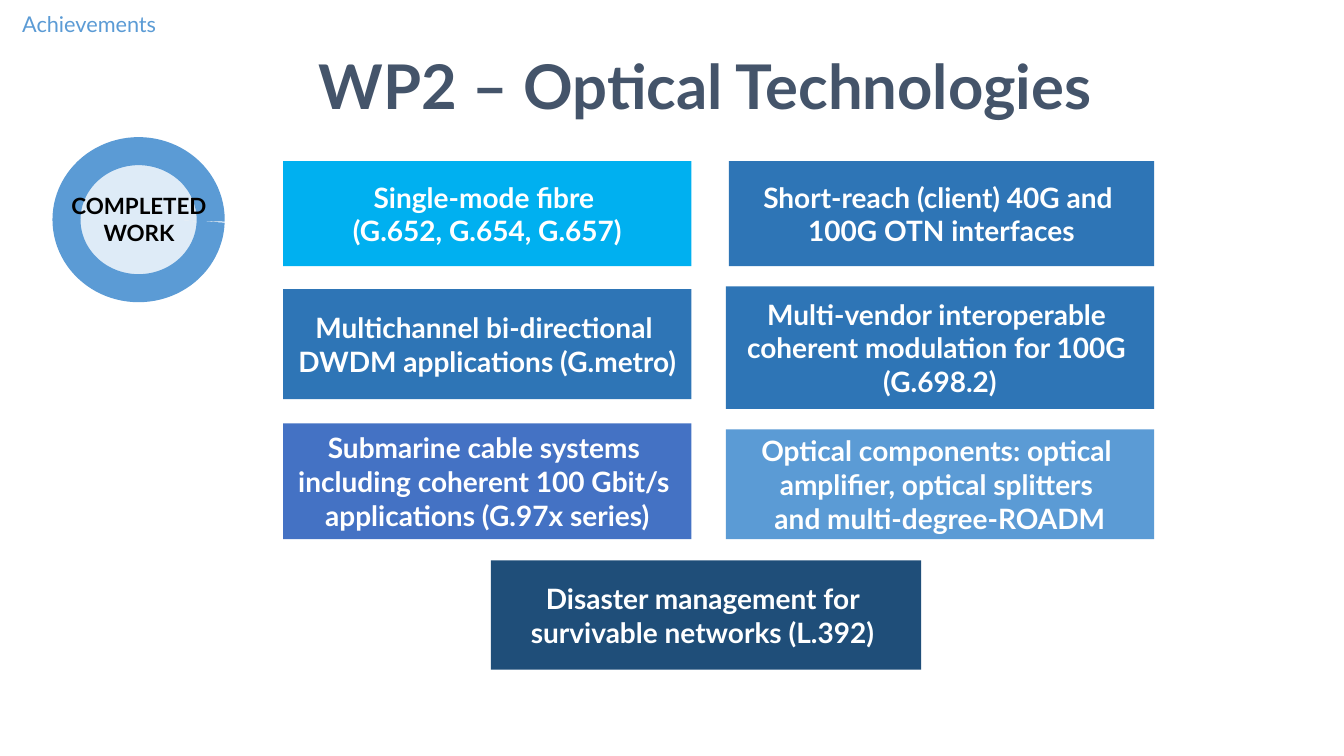
from pptx import Presentation
from pptx.dml.color import RGBColor
from pptx.enum.shapes import MSO_SHAPE
from pptx.enum.text import MSO_ANCHOR, PP_ALIGN
from pptx.util import Pt

NAVY, BLUE, SKY = "1F4E79", "2E75B6", "5B9BD5"
LEFT_COLUMN = (202.3, 291.6)
RIGHT_COLUMN = (518.4, 306)

# (left, width), top, height, fill, wording
TOPICS = [
    (LEFT_COLUMN, 302.4, 82.8, "4472C4",
     "Submarine cable systems \vincluding coherent 100 Gbit/s \vapplications (G.97x series)"),
    ((350.6, 307.4), 400.3, 78.1, NAVY,
     "Disaster management for \vsurvivable networks (L.392) "),
    (LEFT_COLUMN, 115.2, 74.9, "00B0F0",
     "Single-mode fibre \v(G.652, G.654, G.657)"),
    ((520.6, 303.8), 115.2, 74.9, BLUE,
     "Short-reach (client) 40G and \v100G OTN interfaces"),
    (LEFT_COLUMN, 206.6, 78.5, BLUE,
     "Multichannel bi-directional \vDWDM applications (G.metro)"),
    (RIGHT_COLUMN, 204.5, 87.5, BLUE,
     "Multi-vendor interoperable \vcoherent modulation for 100G \v(G.698.2)"),
    (RIGHT_COLUMN, 306.7, 78.5, SKY,
     "Optical components: optical \namplifier, optical splitters \vand multi-degree-ROADM"),
]


def color(hex_code):
    return RGBColor.from_string(hex_code)


def assign(target, values):
    """Set each named attribute on the target."""
    for name, value in values.items():
        setattr(target, name, value)


class SlideBuilder:
    font_name = "Lato"

    def __init__(self, slide):
        self.shapes = slide.shapes

    def fill_text(self, frame, wording, size, ink, inset, bold=True, wrap=True,
                  anchor=MSO_ANCHOR.TOP, paragraph_format=None):
        """Fill a text frame; inset is (horizontal, vertical)."""
        across, down = map(Pt, inset)
        assign(frame, {"text": wording, "word_wrap": wrap, "vertical_anchor": anchor,
                       "margin_left": across, "margin_right": across,
                       "margin_top": down, "margin_bottom": down})
        for paragraph in frame.paragraphs:
            assign(paragraph, {"alignment": PP_ALIGN.CENTER, **(paragraph_format or {})})
            for run in paragraph.runs:
                assign(run.font, {"name": self.font_name, "size": Pt(size), "bold": bold})
                run.font.color.rgb = color(ink)

    def label(self, box, wording, size, ink, inset, **options):
        frame = self.shapes.add_textbox(*map(Pt, box)).text_frame
        self.fill_text(frame, wording, size, ink, inset, **options)

    def figure(self, kind, box, fill, outline=None, outline_width=0):
        shape = self.shapes.add_shape(kind, *map(Pt, box))
        shape.shadow.inherit = False
        shape.fill.solid()
        shape.fill.fore_color.rgb = color(fill)
        if outline:
            shape.line.color.rgb = color(outline)
            shape.line.width = Pt(outline_width)
        else:
            shape.line.fill.background()
        return shape

    def tile(self, box, fill, wording):
        tile = self.figure(MSO_SHAPE.RECTANGLE, box, fill)
        self.fill_text(tile.text_frame, wording, 20, "FFFFFF", (5, 2.2),
                       wrap=False, anchor=MSO_ANCHOR.MIDDLE)

    def status_ring(self, wording):
        self.figure(MSO_SHAPE.OVAL, (43.9, 104.4, 111.6, 105.8), "F2F2F2")
        ring = self.figure(MSO_SHAPE.ARC, (47.5, 108, 103, 97.9), "DEEBF7", SKY, 20)
        ring.adjustments[0] = 1
        ring.adjustments[1] = 0.733
        self.label((41, 133.9, 116.6, 46.1), wording, 16, "000000", (7.2, 3.6))


def main():
    presentation = Presentation()
    assign(presentation, {"slide_width": Pt(960), "slide_height": Pt(540)})
    builder = SlideBuilder(presentation.slides.add_slide(presentation.slide_layouts[6]))

    builder.label((204.5, 33.1, 599, 56.9), "WP2 – Optical Technologies", 44, "44546A",
                  (3.6, 1.4), wrap=False)
    builder.label((0, 0, 127.4, 31.7), "Achievements", 15.5, SKY, (8.6, 4.3), bold=False,
                  paragraph_format={"line_spacing": 1.2, "space_before": Pt(3.1)})
    builder.status_ring("COMPLETED\vWORK")
    for (left, width), top, height, fill, wording in TOPICS:
        builder.tile((left, top, width, height), fill, wording)

    presentation.save("out.pptx")


if __name__ == "__main__":
    main()
